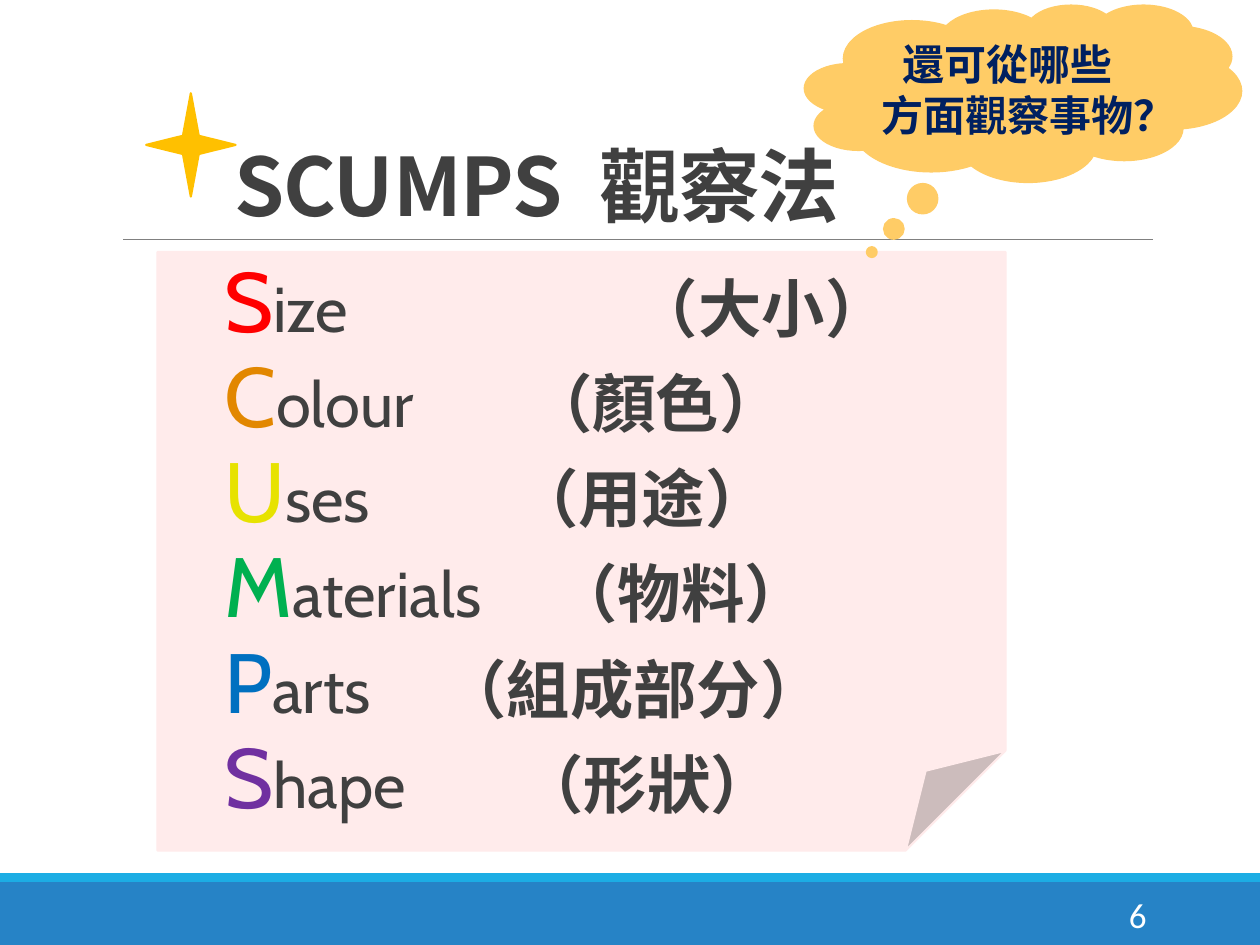
from lxml.etree import SubElement
from pptx import Presentation
from pptx.dml.color import RGBColor
from pptx.enum.shapes import MSO_CONNECTOR, MSO_SHAPE
from pptx.enum.text import MSO_ANCHOR, PP_ALIGN
from pptx.oxml.ns import qn
from pptx.util import Inches, Pt

CELL = Inches(0.1)
COLUMNS, ROWS = 100, 75
CJK, LATIN, NUMERAL = "Noto Sans CJK SC", "Cabin", "Calibri"
COLOURS = {
    "band": "2683C6", "stripe": "1CADE4", "rule": "808080", "note": "FFEBEB",
    "text": "404040", "star": "FFC000", "cloud": "FFCC66", "question": "002060",
    "white": "FFFFFF", "red": "FF0000", "orange": "E28700", "yellow": "E7E200",
    "green": "00B050", "blue": "0070C0", "purple": "7030A0",
}
ASPECTS = [
    ("S", "ize", "（大小）", "red", 32.6),
    ("C", "olour", "（顏色）", "orange", 24.2),
    ("U", "ses", "（用途）", "yellow", 23.1),
    ("M", "aterials", "（物料）", "green", 26.2),
    ("P", "arts", "（組成部分）", "blue", 17.4),
    ("S", "hape", "（形狀）", "purple", 23.5),
]


def grid(*cells):
    """Turn columns and rows of the slide grid into lengths."""
    return [round(cell * CELL) for cell in cells]


def colour(key):
    """Look up a named colour."""
    return RGBColor.from_string(COLOURS[key])


def style_run(run, size, font, shade, bold=False):
    """Give a run its size, typeface, colour and weight."""
    run.font.size, run.font.name, run.font.bold = Pt(size), font, bold
    run.font.color.rgb = colour(shade)
    SubElement(run.font._element, qn("a:ea"), typeface=font)


def set_tab(paragraph, column):
    """Put one left tab stop in a paragraph."""
    stops = SubElement(paragraph._p.get_or_add_pPr(), qn("a:tabLst"))
    SubElement(stops, qn("a:tab"), pos=str(grid(column)[0]), algn="l")


def add_figure(slide, preset, cells, shade, outlined=True):
    """Add a preset shape in a single colour."""
    figure = slide.shapes.add_shape(preset, *grid(*cells))
    figure.shadow.inherit = False
    figure.fill.solid()
    figure.fill.fore_color.rgb = colour(shade)
    if outlined:
        figure.line.color.rgb = colour(shade)
        figure.line.width = Pt(1.25)
    else:
        figure.line.fill.background()
    return figure


def add_rule(slide, start, end, row):
    """Draw the thin line under the title."""
    rule = slide.shapes.add_connector(MSO_CONNECTOR.STRAIGHT, *grid(start, row, end, row))
    rule.line.color.rgb = colour("rule")
    rule.line.width = Pt(0.5)
    SubElement(rule._element.spPr, qn("a:effectLst"))


def add_frame(slide, cells, anchor):
    """Add a wrapping text frame without side margins."""
    frame = slide.shapes.add_textbox(*grid(*cells)).text_frame
    frame.word_wrap = True
    frame.margin_left = frame.margin_right = 0
    frame.vertical_anchor = anchor
    return frame


def add_title(slide):
    """Write the heading above the rule."""
    heading = add_frame(slide, (18.6, 3.1, 72.9, 15.9), MSO_ANCHOR.BOTTOM).paragraphs[0]
    heading.text = "SCUMPS\t觀察法"
    heading.line_spacing = 0.85
    set_tab(heading, 29)
    for run in heading.runs:
        style_run(run, 46, CJK, "text", bold=True)
        run.font._element.set("spc", "-50")


def add_aspects(slide):
    """List the six aspects with coloured initials."""
    frame = add_frame(slide, (17.8, 21.4, 56.6, 46.1), MSO_ANCHOR.TOP)
    for index, (initial, rest, meaning, shade, column) in enumerate(ASPECTS):
        aspect = frame.add_paragraph() if index else frame.paragraphs[0]
        aspect.line_spacing = 0.7
        aspect.space_before, aspect.space_after = Pt(12), Pt(2)
        set_tab(aspect, column)
        for words, size, font, tint, bold in (
            (initial, 48.1, LATIN, shade, False),
            (rest + "\t", 36.2, LATIN, "text", False),
            (meaning, 36.2, CJK, "text", True),
        ):
            run = aspect.add_run()
            run.text = words
            style_run(run, size, font, tint, bold)


def add_page_number(slide, number):
    """Write the page number on the bottom band."""
    frame = add_frame(slide, (81.2, 70.6, 9.8, 4), MSO_ANCHOR.MIDDLE)
    frame.text = str(number)
    frame.paragraphs[0].alignment = PP_ALIGN.RIGHT
    style_run(frame.paragraphs[0].runs[0], 20, NUMERAL, "white")


def add_question(slide):
    """Add the thought cloud with its question."""
    cloud = add_figure(slide, MSO_SHAPE.CLOUD_CALLOUT, (63.9, 0.4, 34.6, 14), "cloud")
    cloud.adjustments[0], cloud.adjustments[1] = -0.347, 0.901
    frame = cloud.text_frame
    frame.word_wrap = True
    frame.vertical_anchor = MSO_ANCHOR.MIDDLE
    question = frame.paragraphs[0]
    question.text = "還可從哪些\v方面觀察事物？"
    question.alignment = PP_ALIGN.CENTER
    for run in question.runs:
        style_run(run, 24, CJK, "question", bold=True)


def main():
    """Build and save the slide."""
    deck = Presentation()
    deck.slide_width, deck.slide_height = grid(COLUMNS, ROWS)
    slide = deck.slides.add_slide(deck.slide_layouts[6])
    add_figure(slide, MSO_SHAPE.RECTANGLE, (0, 70, COLUMNS, 5), "band", outlined=False)
    add_figure(slide, MSO_SHAPE.RECTANGLE, (0, 69.3, COLUMNS, 0.7), "stripe", outlined=False)
    add_rule(slide, 9.8, 91.5, 19)
    add_figure(slide, MSO_SHAPE.FOLDED_CORNER, (12.5, 20, 67.3, 47.5), "note")
    add_title(slide)
    add_aspects(slide)
    add_page_number(slide, 6)
    add_figure(slide, MSO_SHAPE.STAR_4_POINT, (11.6, 7.4, 7.1, 8.2), "star")
    add_question(slide)
    deck.save("out.pptx")


if __name__ == "__main__":
    main()
